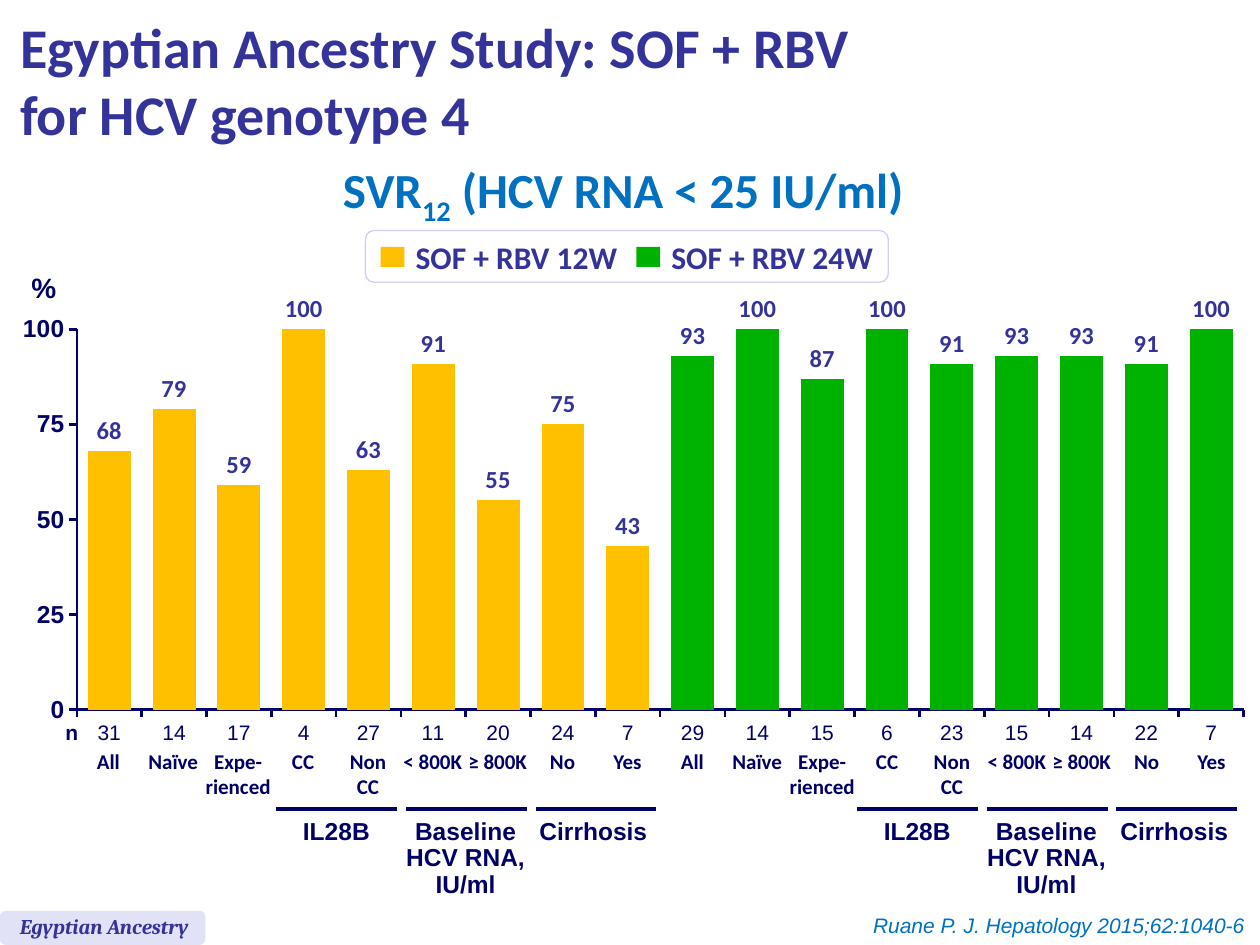
"""Build the slide of SVR12 rates by treatment duration and patient subgroup."""
from dataclasses import dataclass
from typing import Optional

import pptx
import pptx.chart.data
import pptx.dml.color
import pptx.enum.chart
import pptx.enum.shapes
import pptx.enum.text
import pptx.oxml
import pptx.oxml.ns
import pptx.util
from pptx.util import Inches

RGBColor = pptx.dml.color.RGBColor
Align = pptx.enum.text.PP_ALIGN
Preset = pptx.enum.shapes.MSO_SHAPE

NAVY = RGBColor(0x00, 0x00, 0x66)
INDIGO = RGBColor(0x33, 0x33, 0x99)
BLUE = RGBColor(0x00, 0x70, 0xC0)
GOLD = RGBColor(0xFF, 0xC0, 0x00)
GREEN = RGBColor(0x00, 0xB2, 0x00)
LAVENDER = RGBColor(0xE2, 0xE2, 0xF6)
PALE_LINE = RGBColor(0xD0, 0xD0, 0xF0)
WHITE = RGBColor(0xFF, 0xFF, 0xFF)
BLACK = RGBColor(0x00, 0x00, 0x00)

COUNTS = (31, 14, 17, 4, 27, 11, 20, 24, 7, 29, 14, 15, 6, 23, 15, 14, 22, 7)
RATES = (68, 79, 59, 100, 63, 91, 55, 75, 43, 93, 100, 87, 100, 91, 93, 93, 91, 100)
ARM_SIZE = 9
FIRST_BAR_CENTER = 0.86
BAR_STEP = 0.515
ARM_OFFSETS = (0, 4.61)


@dataclass(frozen=True)
class Style:
    size: float
    color: RGBColor
    name: str = "Arial"
    bold: bool = True
    italic: bool = False
    align: Align = Align.LEFT
    line_spacing: Optional[float] = None


@dataclass(frozen=True)
class Subgroup:
    label: str
    width: float
    height: float = 0.3


@dataclass(frozen=True)
class Bracket:
    lines: tuple[str, ...]
    line_left: float
    text_left: float
    width: float
    height: float = 0.32


@dataclass(frozen=True)
class LegendEntry:
    label: str
    color: RGBColor
    left: float


SUBGROUPS = (
    Subgroup("All", 0.39),
    Subgroup("Naïve", 0.6),
    Subgroup("Expe-\nrienced", 0.72, 0.5),
    Subgroup("CC", 0.38),
    Subgroup("Non\nCC", 0.49, 0.5),
    Subgroup("< 800K", 0.68),
    Subgroup("≥ 800K", 0.68),
    Subgroup("No", 0.4),
    Subgroup("Yes", 0.43),
)
BRACKETS = (
    Bracket(("IL28B",), 2.19, 2.3, 0.74),
    Bracket(("Baseline", "HCV RNA,", "IU/ml"), 3.22, 3.12, 1.15, 0.74),
    Bracket(("Cirrhosis",), 4.25, 4.18, 1.06),
)
LEGEND = (
    LegendEntry("SOF + RBV 12W", GOLD, 3.02),
    LegendEntry("SOF + RBV 24W", GREEN, 5.05),
)


def set_font(font, style: Style) -> None:
    """Apply a text style to a font."""
    font.name = style.name
    font.size = pptx.util.Pt(style.size)
    font.bold = style.bold
    font.italic = style.italic
    font.color.rgb = style.color


def add_text(shapes, lines: tuple[str, ...], left: float, top: float, width: float,
             height: float, style: Style, wrap: bool = False):
    """Add a text box with one paragraph per line and return its text frame."""
    box = shapes.add_textbox(Inches(left), Inches(top), Inches(width), Inches(height))
    frame = box.text_frame
    frame.word_wrap = wrap
    frame.auto_size = pptx.enum.text.MSO_AUTO_SIZE.SHAPE_TO_FIT_TEXT
    for index, line in enumerate(lines):
        paragraph = frame.add_paragraph() if index else frame.paragraphs[0]
        paragraph.text = line
        paragraph.alignment = style.align
        paragraph.line_spacing = style.line_spacing
        set_font(paragraph.font, style)
    return frame


def add_block(shapes, preset: Preset, left: float, top: float, width: float, height: float,
              fill: RGBColor, line: Optional[RGBColor] = None) -> None:
    """Add a filled shape, outlined only when a line colour is given."""
    shape = shapes.add_shape(preset, Inches(left), Inches(top), Inches(width), Inches(height))
    shape.shadow.inherit = False
    shape.fill.solid()
    shape.fill.fore_color.rgb = fill
    if line is None:
        shape.line.fill.background()
    else:
        shape.line.color.rgb = line
        shape.line.width = pptx.util.Pt(0.75)


def add_rule(shapes, left: float, top: float, width: float) -> None:
    """Add a horizontal navy line."""
    rule = shapes.add_connector(pptx.enum.shapes.MSO_CONNECTOR.STRAIGHT, Inches(left),
                                Inches(top), Inches(left + width), Inches(top))
    rule.line.color.rgb = NAVY
    rule.line.width = pptx.util.Pt(2.25)
    rule._element.spPr.append(pptx.oxml.parse_xml(
        f'<a:effectLst {pptx.oxml.ns.nsdecls("a")}/>'))


def add_rate_chart(slide) -> None:
    """Add the column chart of response rates."""
    data = pptx.chart.data.CategoryChartData()
    data.categories = COUNTS
    data.add_series("Series 1", RATES)
    chart = slide.shapes.add_chart(
        pptx.enum.chart.XL_CHART_TYPE.COLUMN_CLUSTERED,
        Inches(0.02), Inches(2.2), Inches(10), Inches(3.84), data).chart
    chart.has_legend = False
    chart.has_title = False
    set_font(chart.font, Style(18, BLACK, bold=False))
    for axis, style in ((chart.category_axis, Style(12, NAVY, bold=False)),
                        (chart.value_axis, Style(14, NAVY))):
        axis.has_major_gridlines = False
        axis.major_tick_mark = pptx.enum.chart.XL_TICK_MARK.OUTSIDE
        axis.format.line.color.rgb = NAVY
        axis.format.line.width = pptx.util.Pt(1.5)
        set_font(axis.tick_labels.font, style)
    chart.value_axis.minimum_scale = 0
    chart.value_axis.maximum_scale = 100
    chart.value_axis.major_unit = 25

    plot = chart.plots[0]
    plot.gap_width = 51
    plot.vary_by_categories = False
    plot.has_data_labels = True
    plot.data_labels.show_value = True
    plot.data_labels.position = pptx.enum.chart.XL_LABEL_POSITION.OUTSIDE_END
    set_font(plot.data_labels.font, Style(14, INDIGO, "Calibri"))
    series = plot.series[0]
    series.format.fill.solid()
    series.format.fill.fore_color.rgb = GREEN
    for index in range(ARM_SIZE):
        fill = series.points[index].format.fill
        fill.solid()
        fill.fore_color.rgb = GOLD

    plot_area = chart._chartSpace.chart.plotArea
    for layout in plot_area.findall(pptx.oxml.ns.qn("c:layout")):
        plot_area.remove(layout)
    sizes = "".join(f'<c:{tag} val="{value}"/>' for tag, value in
                    (("x", 0.059), ("y", 0.108), ("w", 0.926), ("h", 0.786)))
    plot_area.insert(0, pptx.oxml.parse_xml(
        f'<c:layout {pptx.oxml.ns.nsdecls("c")}><c:manualLayout>'
        '<c:layoutTarget val="inner"/><c:xMode val="edge"/><c:yMode val="edge"/>'
        f'{sizes}</c:manualLayout></c:layout>'))


def add_title(slide) -> None:
    """Fill and place the title placeholder."""
    title = slide.shapes.title
    title.left, title.top = Inches(0.06), Inches(0.03)
    title.width, title.height = Inches(9.55), Inches(1.21)
    title.text_frame.vertical_anchor = pptx.enum.text.MSO_ANCHOR.MIDDLE
    paragraph = title.text_frame.paragraphs[0]
    paragraph.text = "Egyptian Ancestry Study: SOF + RBV\nfor HCV genotype 4"
    paragraph.alignment = Align.LEFT
    set_font(paragraph.font, Style(32, INDIGO, "Calibri"))


def main() -> None:
    """Build and save the presentation."""
    presentation = pptx.Presentation()
    presentation.slide_width, presentation.slide_height = Inches(10), Inches(7.5)
    slide = presentation.slides.add_slide(presentation.slide_layouts[5])
    shapes = slide.shapes
    add_title(slide)
    add_rate_chart(slide)

    heading = add_text(shapes, ("SVR",), 2.54, 1.22, 4.9, 0.57,
                       Style(28, BLUE, "Calibri", align=Align.CENTER)).paragraphs[0]
    subscript = heading.add_run()
    subscript.text = "12"
    subscript.font._element.set("baseline", "-25000")
    heading.add_run().text = " (HCV RNA < 25 IU/ml) "

    add_text(shapes, ("n",), 0.42, 5.66, 0.31, 0.3, Style(12, NAVY))
    add_text(shapes, ("%",), 0.15, 2.1, 0.4, 0.37, Style(16, NAVY))
    label_style = Style(12, NAVY, "Calibri", align=Align.CENTER)
    for index, subgroup in enumerate(SUBGROUPS * 2):
        left = FIRST_BAR_CENTER + index * BAR_STEP - subgroup.width / 2
        add_text(shapes, (subgroup.label,), left, 5.89, subgroup.width, subgroup.height,
                 label_style)

    bracket_style = Style(14, NAVY, align=Align.CENTER, line_spacing=0.9)
    for offset in ARM_OFFSETS:
        group = shapes.add_group_shape()
        for bracket in BRACKETS:
            add_rule(group.shapes, bracket.line_left + offset, 6.42, 0.96)
            add_text(group.shapes, bracket.lines, bracket.text_left + offset, 6.45,
                     bracket.width, bracket.height, bracket_style)

    add_block(shapes, Preset.ROUNDED_RECTANGLE, 2.9, 1.83, 4.15, 0.41, WHITE, PALE_LINE)
    for entry in LEGEND:
        add_block(shapes, Preset.RECTANGLE, entry.left, 1.96, 0.19, 0.16, entry.color)
        add_text(shapes, (entry.label,), entry.left + 0.18, 1.84, 1.82, 0.4,
                 Style(18, INDIGO, "Calibri"))

    add_block(shapes, Preset.ROUNDED_RECTANGLE, 0, 7.23, 1.63, 0.27, LAVENDER)
    add_text(shapes, ("Egyptian Ancestry",), 0.06, 7.2, 1.57, 0.3,
             Style(12, INDIGO, "Cambria", italic=True), wrap=True)
    add_text(shapes, ("Ruane P. J. Hepatology 2015;62:1040-6",), 6.17, 7.19, 3.81, 0.3,
             Style(12, BLUE, bold=False, italic=True, align=Align.RIGHT), wrap=True)
    presentation.save("out.pptx")


if __name__ == "__main__":
    main()
